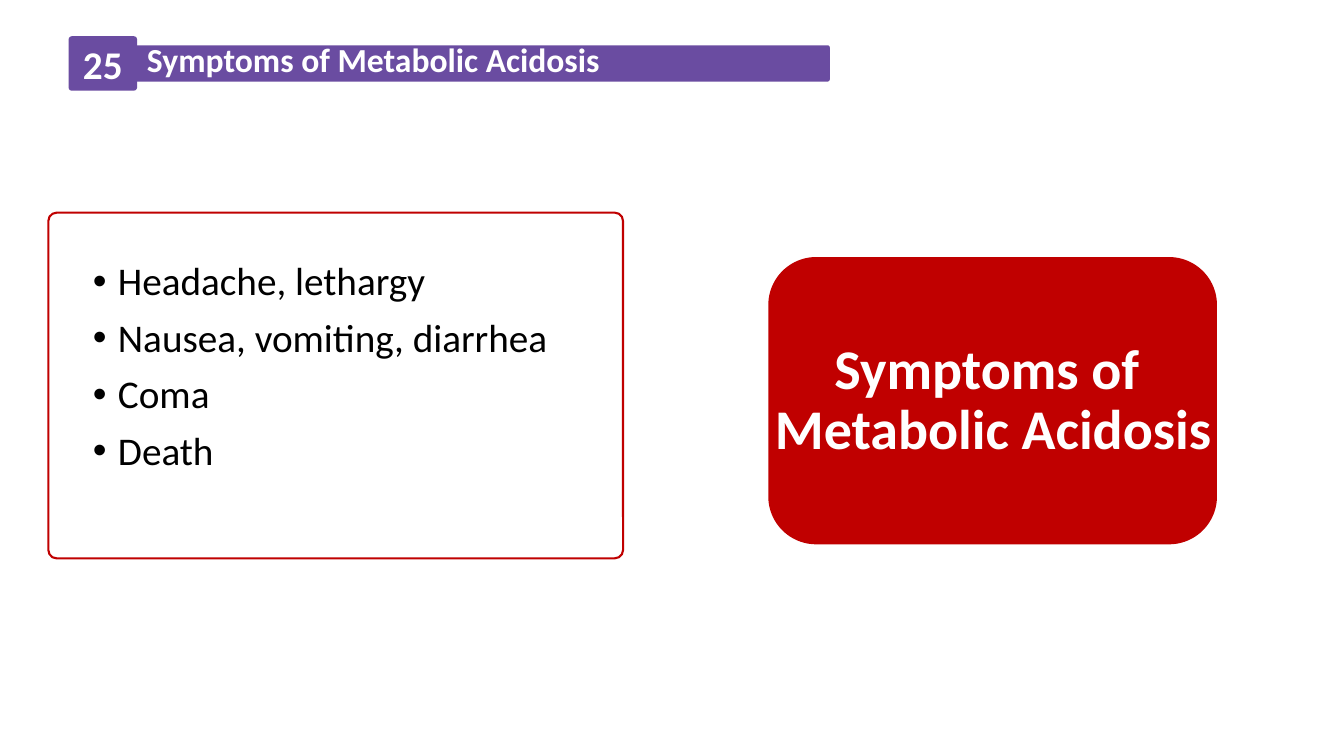
from dataclasses import dataclass

from lxml import etree
from pptx import Presentation
from pptx.dml.color import RGBColor
from pptx.enum.shapes import MSO_SHAPE
from pptx.enum.text import MSO_ANCHOR, MSO_AUTO_SIZE, PP_ALIGN
from pptx.oxml.ns import qn
from pptx.util import Inches, Pt

ROUNDED = MSO_SHAPE.ROUNDED_RECTANGLE
TOP, MIDDLE = MSO_ANCHOR.TOP, MSO_ANCHOR.MIDDLE
LEFT, CENTER = PP_ALIGN.LEFT, PP_ALIGN.CENTER
NO_AUTOFIT = MSO_AUTO_SIZE.NONE

COLORS = {"purple": "6A4CA1", "red": "C00000", "white": "FFFFFF", "black": "000000"}
SYMPTOMS = ["Headache, lethargy", "Nausea, vomiting, diarrhea", "Coma", "Death"]


@dataclass
class Panel:
    left: float
    top: float
    width: float
    height: float
    fill: str
    corner: float
    outline: str | None = None


@dataclass
class TextStyle:
    size: int
    color: str
    bold: bool = True
    align: PP_ALIGN = LEFT
    anchor: MSO_ANCHOR = TOP


LIST_PANEL = Panel(0.48, 2.11, 5.7, 3.43, "white", 0.024, "red")
HEADER_BAR = Panel(1.09, 0.45, 7.14, 0.36, "purple", 0.06)
NUMBER_TILE = Panel(0.68, 0.36, 0.68, 0.54, "purple", 0.06)
TITLE_PANEL = Panel(7.62, 2.55, 4.45, 2.85, "red", 0.1667)


def rgb(name: str) -> RGBColor:
    return RGBColor.from_string(COLORS[name])


def add_panel(s, panel: Panel):
    sp = s.shapes.add_shape(ROUNDED, Inches(panel.left), Inches(panel.top),
                            Inches(panel.width), Inches(panel.height))
    sp.shadow.inherit = False
    sp.adjustments[0] = panel.corner
    sp.fill.solid()
    sp.fill.fore_color.rgb = rgb(panel.fill)
    if panel.outline:
        sp.line.color.rgb = rgb(panel.outline)
        sp.line.width = Pt(1.5)
    else:
        sp.line.fill.background()
    return sp


def write_text(sp, lines: list[str], style: TextStyle, **spacing):
    """Fill a shape with one paragraph per line; spacing sets paragraph attributes."""
    tf = sp.text_frame
    frame = {"word_wrap": True, "auto_size": NO_AUTOFIT, "vertical_anchor": style.anchor}
    for name, value in frame.items():
        setattr(tf, name, value)
    tf.text = "\n".join(lines)
    font = {"name": "Calibri", "size": Pt(style.size), "bold": style.bold}
    for p in tf.paragraphs:
        for name, value in {"alignment": style.align, **spacing}.items():
            setattr(p, name, value)
        for r in p.runs:
            for name, value in font.items():
                setattr(r.font, name, value)
            r.font.color.rgb = rgb(style.color)


def add_bullet(p):
    pPr = p._p.get_or_add_pPr()
    pPr.set("marL", str(Inches(0.25)))
    pPr.set("indent", str(-Inches(0.25)))
    etree.SubElement(pPr, qn("a:buFont")).set("typeface", "Arial")
    etree.SubElement(pPr, qn("a:buChar")).set("char", "•")


def place_on_top(s, sp, left: float, top: float, width: float, height: float):
    """Position a placeholder and bring it in front of the shapes drawn so far."""
    box = {"left": left, "top": top, "width": width, "height": height}
    for name, value in box.items():
        setattr(sp, name, Inches(value))
    sp.element.getparent().append(sp.element)


def add_symptom_list(s):
    add_panel(s, LIST_PANEL)
    body = s.placeholders[1]
    place_on_top(s, body, 0.82, 2.55, 5.1, 2.51)
    write_text(body, SYMPTOMS, TextStyle(28, "black", bold=False), line_spacing=0.9)
    for i, p in enumerate(body.text_frame.paragraphs):
        p.space_before = Pt(10 if i else 0)
        add_bullet(p)


def add_header(s):
    add_panel(s, HEADER_BAR)
    tile = add_panel(s, NUMBER_TILE)
    tf = tile.text_frame
    tf.margin_left = tf.margin_right = Inches(0.05)
    write_text(tile, ["25"], TextStyle(28, "white", align=CENTER, anchor=MIDDLE))
    heading = s.shapes.add_textbox(Inches(1.36), Inches(0.53), Inches(5.97), Inches(0.35))
    write_text(heading, ["Symptoms of Metabolic Acidosis"], TextStyle(24, "white"),
               line_spacing=Pt(15.2), space_after=Pt(5))


def add_title(s):
    add_panel(s, TITLE_PANEL)
    title = s.shapes.title
    place_on_top(s, title, 7.49, 3.17, 4.72, 1.62)
    write_text(title, ["Symptoms of \vMetabolic Acidosis"],
               TextStyle(40, "white", align=CENTER, anchor=MIDDLE),
               line_spacing=0.9, space_before=Pt(0))


def main():
    prs = Presentation()
    prs.slide_width, prs.slide_height = Inches(13.33), Inches(7.5)
    s = prs.slides.add_slide(prs.slide_layouts[1])
    add_symptom_list(s)
    add_header(s)
    add_title(s)
    prs.save("out.pptx")


if __name__ == "__main__":
    main()
